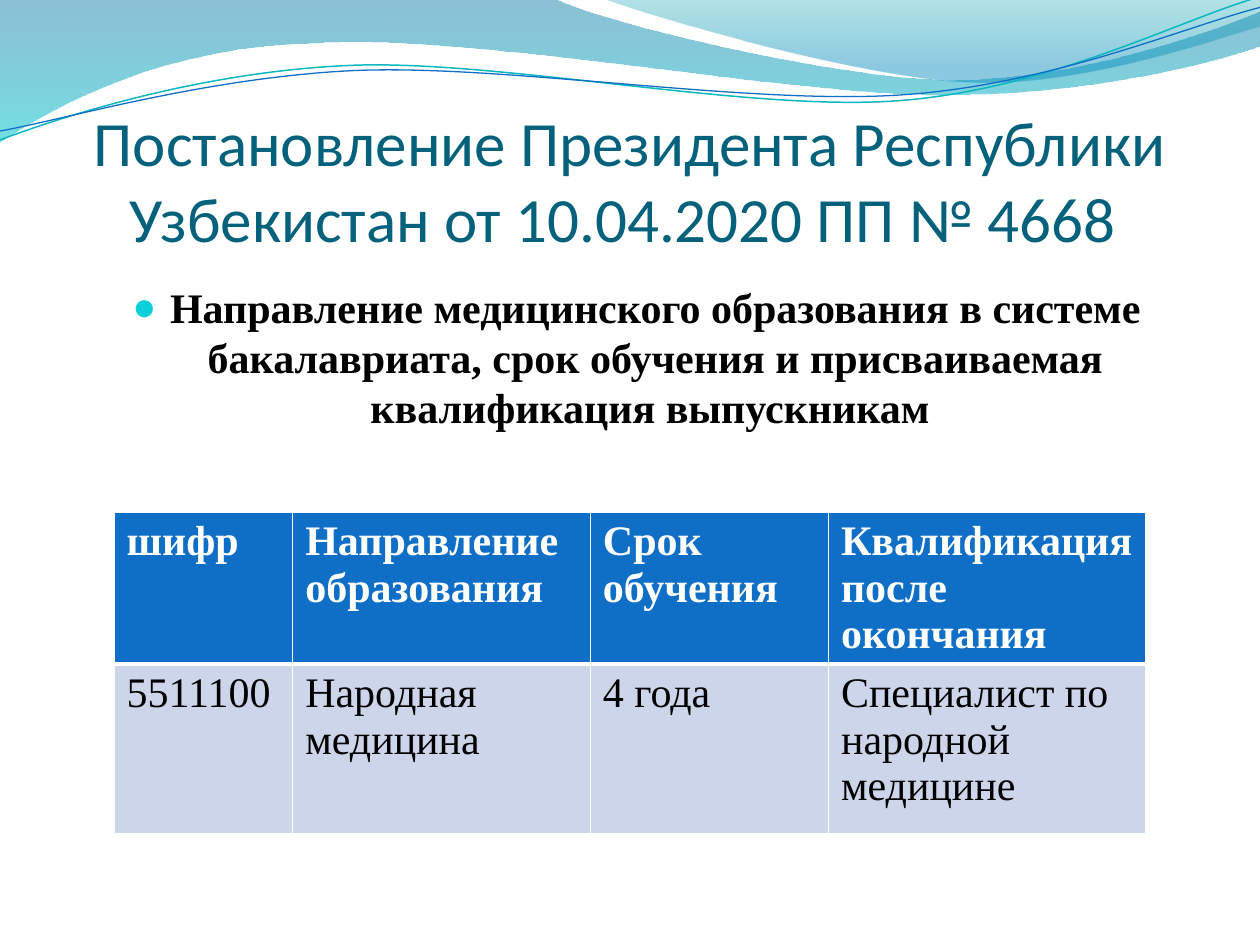
from math import cos, radians, sin

from lxml.etree import SubElement
from pptx import Presentation
from pptx.dml.color import RGBColor
from pptx.enum.text import MSO_ANCHOR as Anchor, PP_ALIGN as Align
from pptx.oxml.ns import qn
from pptx.util import Cm, Pt

WHITE = RGBColor(0xFF, 0xFF, 0xFF)
BLACK = RGBColor(0, 0, 0)
BLUE = RGBColor(0x0F, 0x6F, 0xC6)
TEAL = RGBColor(0x0A, 0xB8, 0xBF)
PALE_BLUE = RGBColor(0xCC, 0xD5, 0xEA)
TITLE_BLUE = RGBColor(0x04, 0x61, 0x7B)
BULLET_CYAN = RGBColor(0x0B, 0xD0, 0xD9)
DEEP_BLUE = RGBColor(0x00, 0x74, 0xA1)
CYAN = RGBColor(0x00, 0xC6, 0xCF)
SEA_GREEN = RGBColor(0x00, 0xA1, 0xA9)
SKY_BLUE = RGBColor(0x00, 0x8B, 0xBF)

SERIF = "Times New Roman"
TITLE_FONT = {"name": "Calibri", "size": Pt(36), "bold": False}
LEAD_FONT = {"name": SERIF, "size": Pt(24), "bold": True}
CELL_FONT = {"name": SERIF, "size": Pt(24), "bold": False}

# Outlines in cm: a start point, then (x, y) for a line or six numbers for a curve.
# Gradient stops: position, colour, opacity in percent.
WAVES = [
    ([(0, 0), (11.18, -0.03), (12.09, 0.43, 16.87, 1.6, 19.25, 1.6),
      (21.67, 1.6, 24.33, 0.66, 25.4, 0.23), (25.43, 0.91),
      (24.97, 1.12, 22.1, 1.93, 18.95, 1.91), (15.8, 1.91, 9.7, 0.71, 6.53, 0.86),
      (3.25, 0.91, 1.17, 2.11, -0.03, 2.87), (0, 0)],
     [(0, DEEP_BLUE, 45), (1, CYAN, 55)]),
    ([(12.17, -0.03), (12.93, 0.28, 17.32, 1.57, 19.53, 1.65),
      (21.74, 1.75, 24.41, 0.81, 25.4, 0.53), (25.4, 0), (12.17, -0.03)],
     [(0, SEA_GREEN, 30), (0.8, SKY_BLUE, 45)]),
]
RIBBONS = [
    ([(0, 2.82), (1.22, 2.36, 4.01, 1.45, 7.04, 1.32),
      (10.03, 1.19, 15.06, 2.26, 18.11, 2.03), (21.16, 1.8, 23.83, 0.38, 25.35, -0.05)],
     TEAL, 0.85),
    ([(0, 2.64), (1.19, 2.44, 4.17, 1.55, 7.19, 1.42),
      (10.24, 1.3, 15.16, 2.13, 18.21, 1.91), (21.23, 1.7, 23.9, 0.53, 25.4, 0.15)],
     BLUE, 0.75),
]
RIBBON_TILT = -2.7
RIBBON_CENTER = (12.68, 1.48)

TABLE_ROWS = [
    ["шифр", "Направление образования", "Срок обучения", "Квалификация после окончания"],
    ["5511100", "Народная медицина", "4 года", "Специалист по народной медицине"],
]
COLUMN_WIDTHS = [3.6, 6, 4.8, 6.4]
ROW_HEIGHTS = [2.18, 3.43]


def set_values(target, values):
    for name, value in values.items():
        setattr(target, name, value)


def format_font(font, values, color):
    set_values(font, values)
    font.color.rgb = color


def turn(segment, degrees, center):
    """Turn every point of a segment clockwise about the center."""
    c, s = cos(radians(degrees)), sin(radians(degrees))
    turned = []
    for x, y in zip(segment[::2], segment[1::2]):
        dx, dy = x - center[0], y - center[1]
        turned += [center[0] + dx * c - dy * s, center[1] + dx * s + dy * c]
    return turned


def add_outline(shapes, outline):
    """Join the end points of all segments, then bend those that are curves."""
    segments = [[Cm(value) for value in segment] for segment in outline]
    ends = [segment[-2:] for segment in segments]
    left, top = (min(values) for values in zip(*ends))
    builder = shapes.build_freeform(*ends[0])
    builder.add_line_segments(ends[1:], close=outline[0] == outline[-1])
    shape = builder.convert_to_shape()
    shape.shadow.inherit = False
    lines = list(shape._element.spPr.iter(qn("a:lnTo")))
    for line, segment in zip(lines, segments[1:]):
        if len(segment) == 6:
            line.tag = qn("a:cubicBezTo")
            line.clear()
            for x, y in zip(segment[::2], segment[1::2]):
                SubElement(line, qn("a:pt"), x=str(x - left), y=str(y - top))
    return shape


def add_wave(slide, outline, stops):
    shape = add_outline(slide.shapes, outline)
    shape.line.fill.background()
    shape.fill.gradient()
    shape.fill.gradient_angle = 270
    for stop, (position, color, _) in zip(shape.fill.gradient_stops, stops):
        stop.position = position
        stop.color.rgb = color
    colors = shape._element.spPr.iter(qn("a:srgbClr"))
    for element, (_, _, opacity) in zip(list(colors), stops):
        SubElement(element, qn("a:alpha"), val=str(opacity * 1000))


def add_ribbon(group, outline, color, width):
    level = [turn(segment, -RIBBON_TILT, RIBBON_CENTER) for segment in outline]
    shape = add_outline(group.shapes, level)
    shape.rotation = RIBBON_TILT
    shape.fill.background()
    shape.line.color.rgb = color
    shape.line.width = Pt(width)


def fill_placeholder(slide, placeholder, box, text, font, color):
    """Place the placeholder in front of the waves and write its text."""
    slide.shapes._spTree.append(placeholder._element)
    set_values(placeholder, dict(zip(("left", "top", "width", "height"), map(Cm, box))))
    paragraph = placeholder.text_frame.paragraphs[0]
    paragraph.alignment = Align.CENTER
    run = paragraph.add_run()
    run.text = text
    format_font(run.font, font, color)
    return paragraph


def add_bullet(paragraph, character, color, percent, indent):
    properties = paragraph._p.get_or_add_pPr()
    properties.set("marL", str(Cm(indent)))
    properties.set("indent", str(-Cm(indent)))
    bullet_color = SubElement(properties, qn("a:buClr"))
    SubElement(bullet_color, qn("a:srgbClr"), val=str(color))
    SubElement(properties, qn("a:buSzPct"), val=str(percent * 1000))
    SubElement(properties, qn("a:buChar"), char=character)


def add_borders(cell, widths):
    properties = cell._tc.get_or_add_tcPr()
    for side, width in widths.items():
        line = SubElement(properties, qn(f"a:ln{side}"), w=str(Pt(width)))
        fill = SubElement(line, qn("a:solidFill"))
        SubElement(fill, qn("a:srgbClr"), val=str(WHITE))


def add_programme_table(slide):
    frame = slide.shapes.add_table(len(TABLE_ROWS), len(COLUMN_WIDTHS), Cm(2.3), Cm(10.32),
                                   Cm(sum(COLUMN_WIDTHS)), Cm(sum(ROW_HEIGHTS)))
    table = frame.table
    for column, width in zip(table.columns, COLUMN_WIDTHS):
        column.width = Cm(width)
    for row_index, texts in enumerate(TABLE_ROWS):
        table.rows[row_index].height = Cm(ROW_HEIGHTS[row_index])
        header = row_index == 0
        for column_index, text in enumerate(texts):
            cell = table.cell(row_index, column_index)
            # The thick rule lies between the header and the row below it.
            add_borders(cell, {"L": 1, "R": 1, "T": 1 if header else 3, "B": 3 if header else 1})
            cell.fill.solid()
            cell.fill.fore_color.rgb = BLUE if header else PALE_BLUE
            run = cell.text_frame.paragraphs[0].add_run()
            run.text = text
            format_font(run.font, LEAD_FONT if header else CELL_FONT, WHITE if header else BLACK)


def main():
    presentation = Presentation()
    presentation.slide_width, presentation.slide_height = Cm(25.4), Cm(19.05)
    slide = presentation.slides.add_slide(presentation.slide_layouts[1])
    for outline, stops in WAVES:
        add_wave(slide, outline, stops)
    ribbons = slide.shapes.add_group_shape()
    for outline, color, width in RIBBONS:
        add_ribbon(ribbons, outline, color, width)

    title, body = slide.shapes.title, slide.placeholders[1]
    fill_placeholder(slide, title, (1.27, 1.96, 22.86, 3.18),
                     "Постановление Президента Республики Узбекистан от 10.04.2020 ПП № 4668 ",
                     TITLE_FONT, TITLE_BLUE)
    set_values(title.text_frame, {"vertical_anchor": Anchor.BOTTOM, "margin_left": 0,
                                  "margin_right": 0, "margin_bottom": 0})
    lead = fill_placeholder(slide, body, (1.5, 5.54, 22.66, 11.38),
                            "Направление медицинского образования в системе бакалавриата, "
                            "срок обучения и присваиваемая квалификация выпускникам ",
                            LEAD_FONT, BLACK)
    lead.space_before = Pt(4.8)
    add_bullet(lead, "●", BULLET_CYAN, 95, 0.76)
    add_programme_table(slide)
    presentation.save("out.pptx")


if __name__ == "__main__":
    main()
